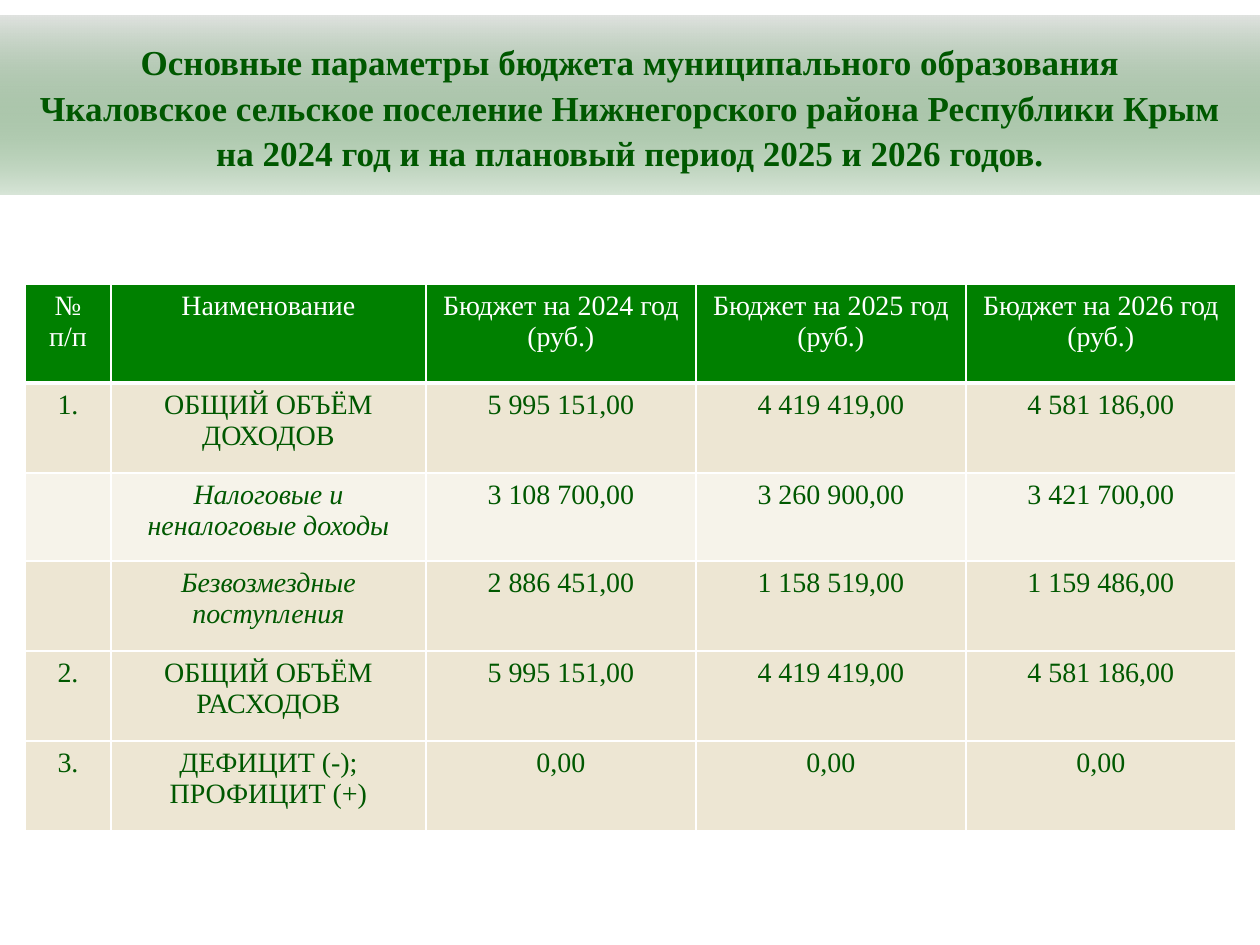
from dataclasses import dataclass

from lxml.etree import SubElement
from pptx import Presentation
from pptx.dml.color import RGBColor
from pptx.enum.text import MSO_ANCHOR, MSO_AUTO_SIZE, PP_ALIGN
from pptx.oxml.ns import qn
from pptx.util import Pt

SCALE = 914400 // 126


@dataclass(frozen=True)
class Theme:
    font: str = "Times New Roman"
    title: int = 20
    body: int = 16
    ink: str = "005800"
    white: str = "FFFFFF"
    head: str = "008000"
    band: str = "EDE6D3"
    pale: str = "F6F3EA"
    mist: str = "DFE2DF"


THEME = Theme()

TITLE = [
    "Основные параметры бюджета муниципального образования",
    "Чкаловское сельское поселение Нижнегорского района Республики Крым",
    "на 2024 год и на плановый период 2025 и 2026 годов.",
]
HEAD = ["№ п/п", "Наименование"] + [
    f"Бюджет на {year} год (руб.)" for year in (2024, 2025, 2026)
]
ROWS = [
    ["1.", "ОБЩИЙ ОБЪЁМ ДОХОДОВ", "5 995 151,00", "4 419 419,00", "4 581 186,00"],
    ["", "Налоговые и неналоговые доходы", "3 108 700,00", "3 260 900,00", "3 421 700,00"],
    ["", "Безвозмездные поступления", "2 886 451,00", "1 158 519,00", "1 159 486,00"],
    ["2.", "ОБЩИЙ ОБЪЁМ РАСХОДОВ", "5 995 151,00", "4 419 419,00", "4 581 186,00"],
    ["3.", "ДЕФИЦИТ (-); ПРОФИЦИТ (+)", "0,00", "0,00", "0,00"],
]
WIDTHS = [86, 315, 270, 270, 270]
HEIGHTS = [99, 90, 88, 90, 90, 90]
PALE_ROW = 2


def px(size):
    return size * SCALE


def write(frame, lines, size=THEME.body, color=THEME.ink, bold=False,
          italic=False, spacing=None):
    for index, line in enumerate(lines):
        para = frame.paragraphs[0] if index == 0 else frame.add_paragraph()
        para.alignment = PP_ALIGN.CENTER
        if spacing:
            para.line_spacing = spacing
        run = para.add_run()
        run.text = line
        font = run.font
        font.name = THEME.font
        font.size = Pt(size)
        font.bold = bold
        font.italic = italic
        font.color.rgb = RGBColor.from_string(color)


def shade(fill):
    fill.gradient()
    fill.gradient_angle = 270
    for stop, color in zip(fill.gradient_stops, (THEME.mist, THEME.ink)):
        stop.color.rgb = RGBColor.from_string(color)
    tone = list(fill._xPr.iter(qn("a:srgbClr")))[-1]
    SubElement(tone, qn("a:alpha"), val="15000")


def banner(slide):
    title = slide.shapes.title
    title.left, title.top = px(0), px(16)
    title.width, title.height = px(1260), px(179)
    shape = SubElement(title.element.spPr, qn("a:prstGeom"), prst="roundRect")
    SubElement(shape, qn("a:avLst"))
    shade(title.fill)
    title.line.fill.background()
    frame = title.text_frame
    frame.auto_size = MSO_AUTO_SIZE.NONE
    frame.word_wrap = False
    frame.vertical_anchor = MSO_ANCHOR.MIDDLE
    write(frame, TITLE, size=THEME.title, bold=True, spacing=1.08)


def border(cell, sides):
    props = cell._tc.get_or_add_tcPr()
    for side, width in sides.items():
        line = SubElement(props, qn(f"a:ln{side}"), w=str(Pt(width)))
        fill = SubElement(line, qn("a:solidFill"))
        SubElement(fill, qn("a:srgbClr"), val=THEME.white)


def paint(cell, text, row, col):
    border(cell, {"L": 1, "R": 1, "T": 3 if row == 1 else 1, "B": 3 if row == 0 else 1})
    tone = THEME.head if row == 0 else THEME.pale if row == PALE_ROW else THEME.band
    cell.fill.solid()
    cell.fill.fore_color.rgb = RGBColor.from_string(tone)
    if text:
        write(cell.text_frame, [text], color=THEME.white if row == 0 else THEME.ink,
              italic=col == 1 and row in (2, 3))


def budget(slide):
    data = [HEAD] + ROWS
    table = slide.shapes.add_table(
        len(data), len(HEAD), px(25), px(284), px(sum(WIDTHS)), px(sum(HEIGHTS))
    ).table
    for column, width in zip(table.columns, WIDTHS):
        column.width = px(width)
    for row, (values, height) in enumerate(zip(data, HEIGHTS)):
        table.rows[row].height = px(height)
        for col, text in enumerate(values):
            paint(table.cell(row, col), text, row, col)


def main():
    deck = Presentation()
    deck.slide_width, deck.slide_height = px(1260), px(945)
    slide = deck.slides.add_slide(deck.slide_layouts[5])
    banner(slide)
    budget(slide)
    deck.save("out.pptx")


if __name__ == "__main__":
    main()
